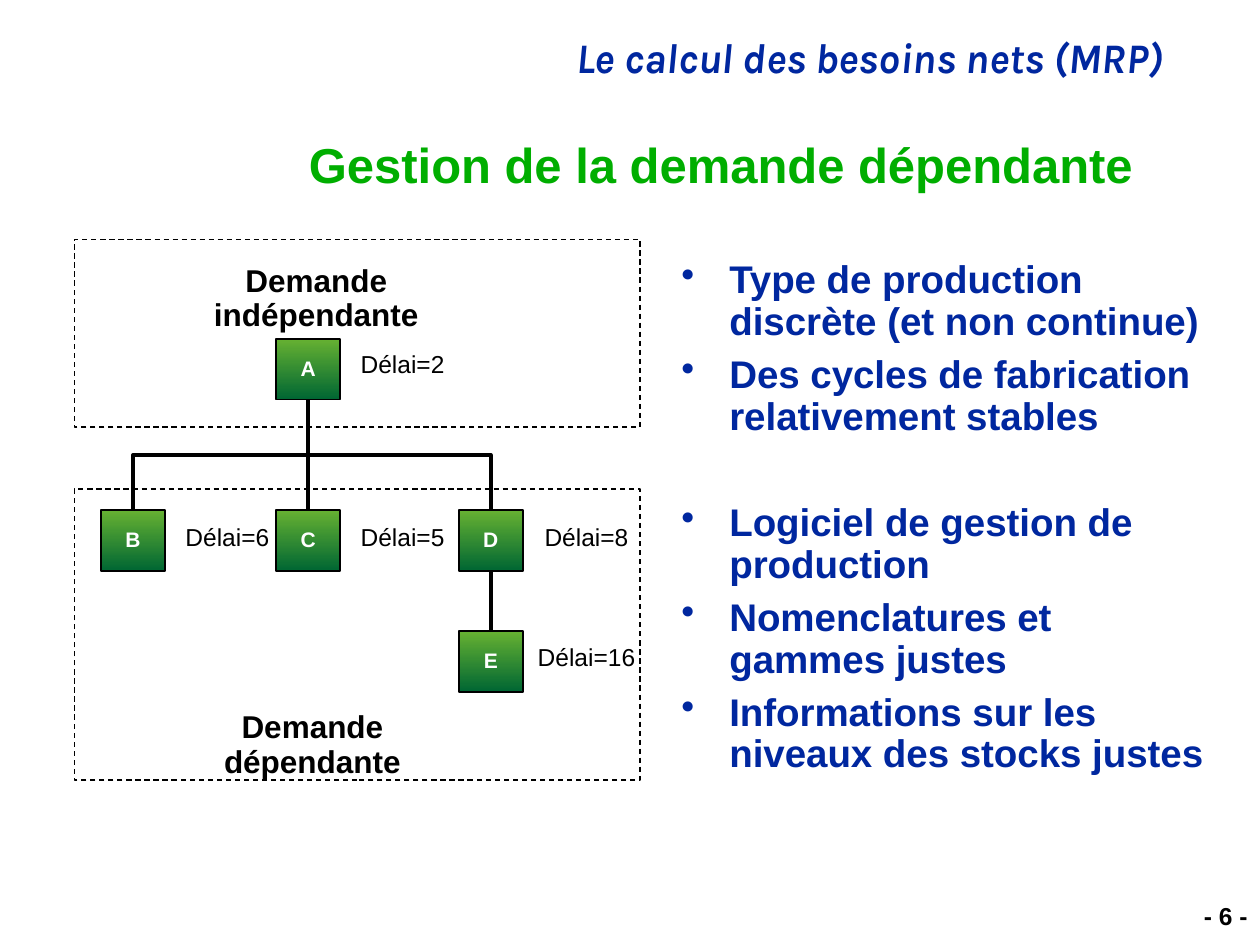
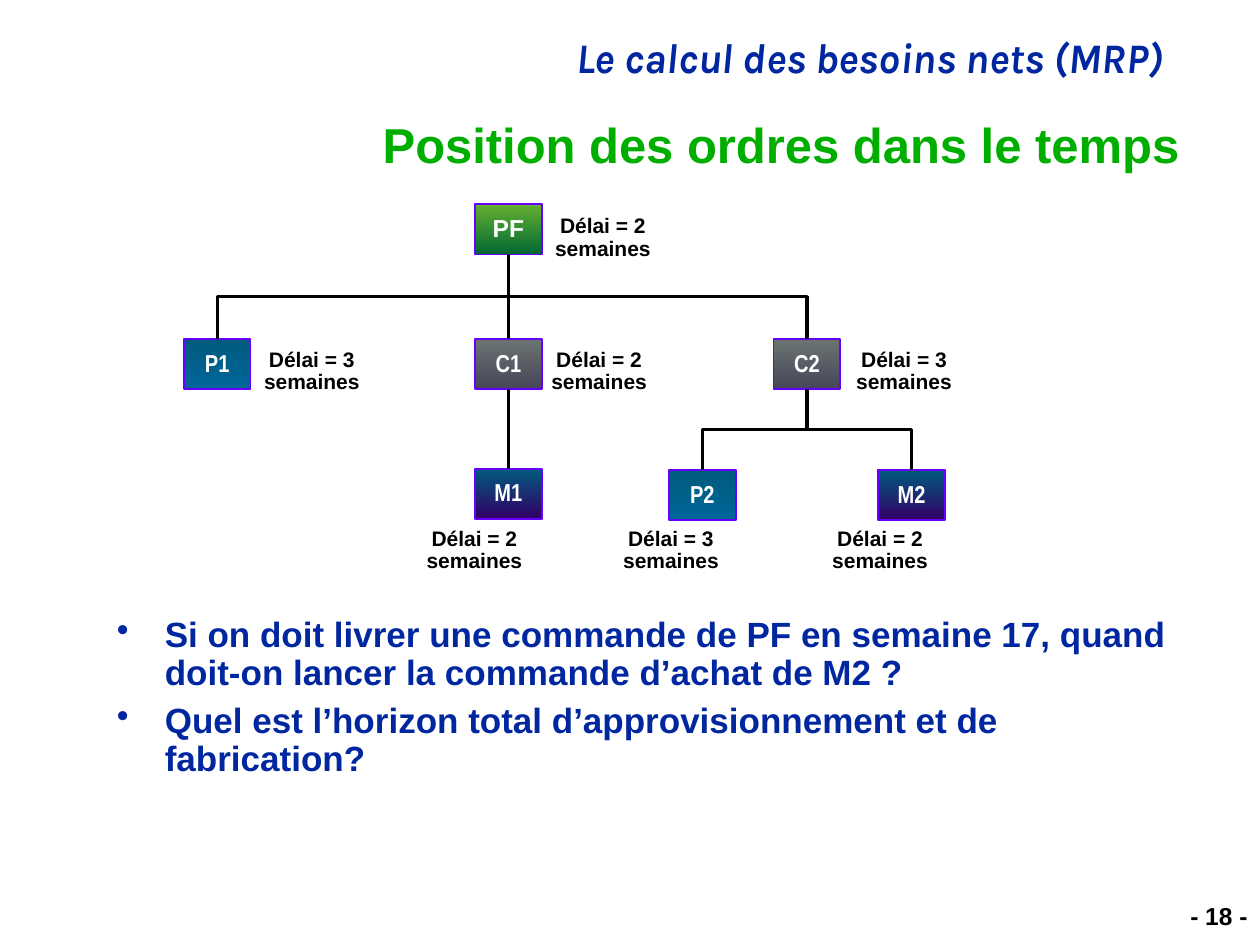
from lxml import etree
from pptx import Presentation
from pptx.dml.color import RGBColor
from pptx.enum.dml import MSO_LINE
from pptx.enum.shapes import MSO_CONNECTOR, MSO_SHAPE
from pptx.enum.text import MSO_ANCHOR, MSO_AUTO_SIZE, PP_ALIGN
from pptx.oxml.ns import qn
from pptx.util import Inches, Pt

LEFT, CENTER, RIGHT = PP_ALIGN.LEFT, PP_ALIGN.CENTER, PP_ALIGN.RIGHT
TOP, MIDDLE = MSO_ANCHOR.TOP, MSO_ANCHOR.MIDDLE
STRAIGHT, ELBOW = MSO_CONNECTOR.STRAIGHT, MSO_CONNECTOR.ELBOW
RECTANGLE, DASH = MSO_SHAPE.RECTANGLE, MSO_LINE.DASH
NO_AUTOFIT = MSO_AUTO_SIZE.NONE

BLUE, GREEN, BLACK, WHITE, VIOLET = "00279F", "00AE00", "000000", "FFFFFF", "6600FF"
PRODUCT = ("66B132", "006633")
PURCHASED = ("005A7C", "006699")
COMPONENT = ("6C7472", "464658")
MATERIAL = ("005A7C", "330066")

COURSE = "Le calcul des besoins nets (MRP)"
INDENT = Inches(0.38)


def rgb(code):
    return RGBColor.from_string(code)


def write(shape, paragraphs, size, color, align=LEFT, anchor=TOP, inset=(0.1, 0.05),
          bullet=False, gaps=None, **font):
    """Fill a shape with paragraphs; gaps gives the points before each one."""
    frame = shape.text_frame
    across, down = (Inches(value) for value in inset)
    for key, value in {"word_wrap": True, "auto_size": NO_AUTOFIT, "vertical_anchor": anchor,
                       "margin_left": across, "margin_right": across,
                       "margin_top": down, "margin_bottom": down}.items():
        setattr(frame, key, value)
    for i, text in enumerate(paragraphs):
        paragraph = frame.paragraphs[0] if i == 0 else frame.add_paragraph()
        paragraph.alignment = align
        paragraph.line_spacing = 0.9
        paragraph.space_before = Pt(gaps[i] if gaps else 0)
        if bullet:
            properties = paragraph._p.get_or_add_pPr()
            properties.set("marL", str(INDENT))
            properties.set("indent", str(-INDENT))
            etree.SubElement(properties, qn("a:buChar")).set("char", "•")
        run = paragraph.add_run()
        run.text = text
        for key, value in {"name": "Arial", "size": Pt(size), "bold": True, **font}.items():
            setattr(run.font, key, value)
        run.font.color.rgb = rgb(color)


# Nodes: name, left, top, gradient, font. Labels: text, left, top.
slides = [
    {
        "title": "Gestion de la demande dépendante", "title_at": (1.17, 1.08), "page": 6,
        "body_at": (5.31, 2.02, 4.41, 5.04), "body_size": 22,
        "bullets": ["Type de production discrète (et non continue)",
                    "Des cycles de fabrication relativement stables",
                    "Logiciel de gestion de production",
                    "Nomenclatures et gammes justes",
                    "Informations sur les niveaux des stocks justes"],
        "gaps": [0, 6.6, 37.2, 6.6, 6.6],
        "node_size": (0.51, 0.48), "node_line": BLACK, "node_text": 12,
        "nodes": [("A", 2.19, 2.69, PRODUCT, "Arial"), ("B", 0.8, 4.05, PRODUCT, "Arial"),
                  ("C", 2.19, 4.05, PRODUCT, "Arial"), ("D", 3.64, 4.05, PRODUCT, "Arial"),
                  ("E", 3.64, 5.01, PRODUCT, "Arial")],
        "links": ["A B", "A C", "A D", "D E"],
        "label_width": 1.01, "label_format": {"size": 14, "bold": False},
        "labels": [("Délai=2", 2.69, 2.75), ("Délai=6", 1.3, 4.12), ("Délai=5", 2.69, 4.12),
                   ("Délai=8", 4.15, 4.12), ("Délai=16", 4.15, 5.07)],
        "zones": [("Demande indépendante", 1.6, 2.06, 1.82, 1.9, 1.49),
                  ("Demande dépendante", 1.68, 5.6, 1.6, 3.88, 2.31)],
    },
    {
        "title": "Position des ordres dans le temps", "title_at": (1.54, 0.92), "page": 18,
        "body_at": (0.83, 4.85, 8.83, 1.97), "body_size": 20,
        "bullets": ["Si on doit livrer une commande de PF en semaine 17, quand doit-on lancer "
                    "la commande d’achat de M2 ?",
                    "Quel est l’horizon total d’approvisionnement et de fabrication?"],
        "gaps": [0, 6],
        "node_size": (0.53, 0.4), "node_line": VIOLET, "node_text": 14,
        "nodes": [("PF", 3.77, 1.62, PRODUCT, "Arial"),
                  ("P1", 1.46, 2.69, PURCHASED, "Arial Narrow"),
                  ("C1", 3.77, 2.69, COMPONENT, "Arial Narrow"),
                  ("C2", 6.14, 2.69, COMPONENT, "Arial Narrow"),
                  ("M1", 3.77, 3.72, MATERIAL, "Arial Narrow"),
                  ("P2", 5.31, 3.73, PURCHASED, "Arial Narrow"),
                  ("M2", 6.97, 3.73, MATERIAL, "Arial Narrow")],
        "links": ["PF P1", "PF C1", "PF C2", "C1 M1", "C2 P2", "C2 M2"],
        "label_width": 0.95, "label_format": {"size": 12},
        "labels": [("Délai = 2 semaines", 4.31, 1.66), ("Délai = 3 semaines", 2, 2.72),
                   ("Délai = 2 semaines", 4.28, 2.72), ("Délai = 3 semaines", 6.7, 2.72),
                   ("Délai = 2 semaines", 3.29, 4.14), ("Délai = 3 semaines", 4.85, 4.14),
                   ("Délai = 2 semaines", 6.51, 4.14)],
        "zones": [],
    },
]

deck = Presentation()
deck.slide_width, deck.slide_height = Inches(10), Inches(7.5)

for content in slides:
    slide = deck.slides.add_slide(deck.slide_layouts[5])
    shapes = slide.shapes

    # Running header, page number, title and bullets
    course = shapes.add_textbox(*map(Inches, (1.25, 0.25, 8.08, 0.46)))
    write(course, [COURSE], 24, BLUE, RIGHT, name="Karla", italic=True)
    page = shapes.add_textbox(*map(Inches, (8.69, 7.13, 1.31, 0.31)))
    write(page, [f"- {content['page']} -"], 14, BLACK, RIGHT)

    title = shapes.title
    title.left, title.top = map(Inches, content["title_at"])
    title.width, title.height = Inches(7.92), Inches(0.5)
    write(title, [content["title"]], 28, GREEN, RIGHT, MIDDLE)

    body = shapes.add_textbox(*map(Inches, content["body_at"]))
    write(body, content["bullets"], content["body_size"], BLUE,
          bullet=True, gaps=content["gaps"])

    # Product tree
    nodes = {}
    for name, left, top, gradient, font in content["nodes"]:
        node = shapes.add_shape(RECTANGLE, *map(Inches, (left, top, *content["node_size"])))
        node.shadow.inherit = False
        node.fill.gradient()
        node.fill.gradient_angle = 270
        for stop, color in zip(node.fill.gradient_stops, gradient):
            stop.color.rgb = rgb(color)
        node.line.color.rgb = rgb(content["node_line"])
        node.line.width = Pt(1)
        write(node, [name], content["node_text"], WHITE, CENTER, MIDDLE, (0, 0), name=font)
        nodes[name] = node

    for link in content["links"]:
        parent, child = (nodes[name] for name in link.split())
        start_x, end_x = (node.left + node.width // 2 for node in (parent, child))
        start_y, end_y = parent.top + parent.height, child.top
        across, drop = end_x - start_x, end_y - start_y
        branch = shapes.add_connector(ELBOW if across else STRAIGHT,
                                      start_x, start_y, end_x, end_y)
        branch.begin_connect(parent, 2)
        branch.end_connect(child, 0)
        branch.line.color.rgb = rgb(BLACK)
        branch.line.width = Pt(2)
        properties = branch.element.spPr
        etree.SubElement(properties, qn("a:effectLst"))
        if across:
            # A quarter turn makes the elbow leave and arrive vertically
            frame = properties.find(qn("a:xfrm"))
            frame.attrib.clear()
            frame.set("rot", str((90 if across < 0 else 270) * 60000))
            if across > 0:
                frame.set("flipH", "1")
            branch.width, branch.height = drop, abs(across)
            branch.left = (start_x + end_x - drop) // 2
            branch.top = (start_y + end_y - abs(across)) // 2

    for text, left, top in content["labels"]:
        delay = shapes.add_textbox(*map(Inches, (left, top, content["label_width"], 0.31)))
        write(delay, [text], color=BLACK, align=CENTER, inset=(0.05, 0.05),
              **content["label_format"])

    # Dashed demand zones
    for text, left, top, width, zone_top, zone_height in content["zones"]:
        caption = shapes.add_textbox(*map(Inches, (left, top, width, 0.4)))
        write(caption, [text], 18, BLACK, CENTER, inset=(0.05, 0.05))
        zone = shapes.add_shape(RECTANGLE, *map(Inches, (0.59, zone_top, 4.49, zone_height)))
        zone.shadow.inherit = False
        zone.fill.background()
        zone.line.color.rgb = rgb(BLACK)
        zone.line.width = Pt(0.75)
        zone.line.dash_style = DASH

deck.save("out.pptx")
